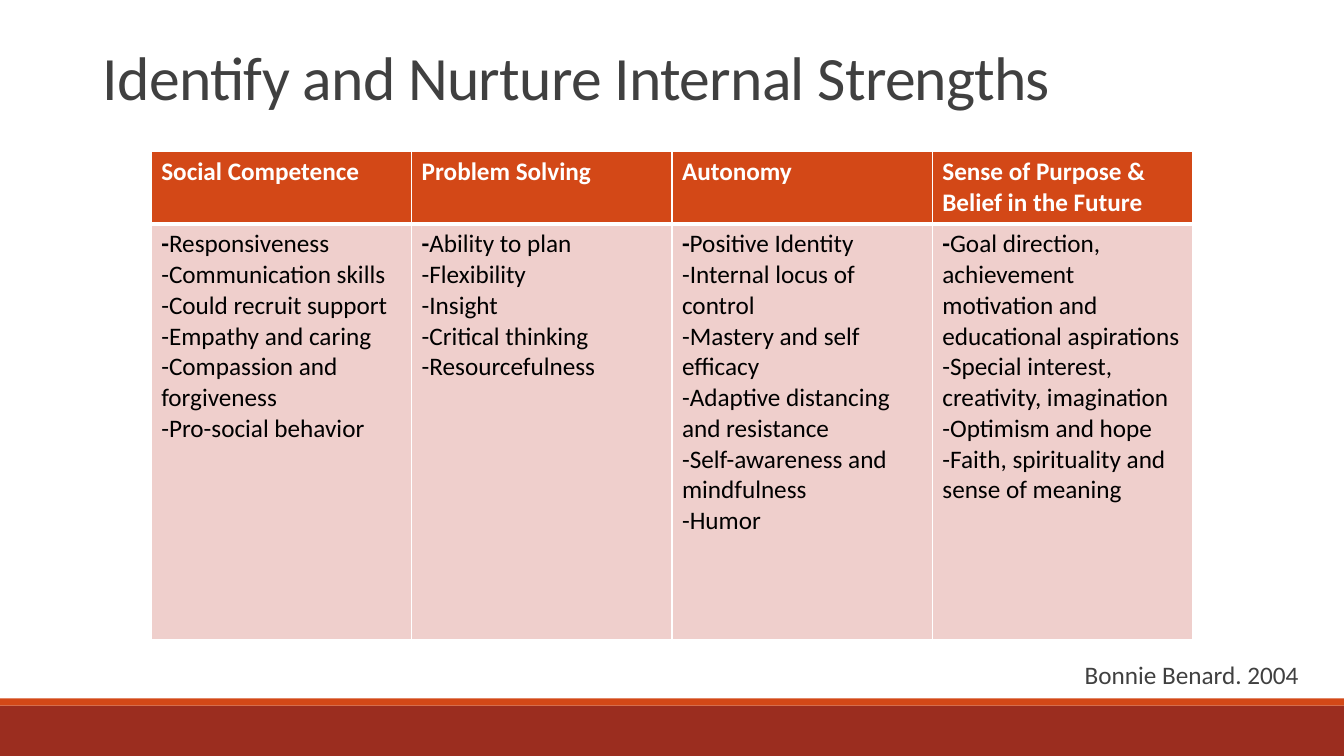
from dataclasses import dataclass

from lxml import etree
from pptx import Presentation
from pptx.dml.color import RGBColor
from pptx.enum.shapes import MSO_SHAPE
from pptx.enum.text import MSO_ANCHOR, MSO_AUTO_SIZE, PP_ALIGN
from pptx.oxml.ns import qn
from pptx.util import Inches, Pt

RECT = MSO_SHAPE.RECTANGLE
BOTTOM = MSO_ANCHOR.BOTTOM
LEFT = PP_ALIGN.LEFT
NO_FIT, GROW = MSO_AUTO_SIZE.NONE, MSO_AUTO_SIZE.SHAPE_TO_FIT_TEXT

ORANGE = RGBColor(0xD3, 0x48, 0x17)
BRICK = RGBColor(0x9B, 0x2D, 0x1F)
PINK = RGBColor(0xEF, 0xCF, 0xCC)
GREY = RGBColor(0x40, 0x40, 0x40)
WHITE = RGBColor(0xFF, 0xFF, 0xFF)
BLACK = RGBColor(0, 0, 0)

TITLE_FONT = {"name": "Calibri", "size": Pt(44), "bold": False}
TEXT_FONT = {"name": "Calibri", "size": Pt(18), "bold": False}
BOLD_FONT = TEXT_FONT | {"bold": True}


@dataclass(frozen=True)
class Bar:
    top: float
    height: float
    color: RGBColor


@dataclass(frozen=True)
class Strength:
    heading: str
    traits: tuple[str, ...]


BARS = (Bar(7, 0.5, BRICK), Bar(6.93, 0.07, ORANGE))
STRENGTHS = (
    Strength("Social Competence", (
        "Responsiveness", "Communication skills", "Could recruit support",
        "Empathy and caring", "Compassion and forgiveness",
        "Pro-social behavior")),
    Strength("Problem Solving", (
        "Ability to plan", "Flexibility", "Insight", "Critical thinking",
        "Resourcefulness")),
    Strength("Autonomy", (
        "Positive Identity", "Internal locus of control",
        "Mastery and self efficacy", "Adaptive distancing and resistance",
        "Self-awareness and mindfulness", "Humor")),
    Strength("Sense of Purpose & Belief in the Future", (
        "Goal direction, achievement motivation and educational aspirations",
        "Special interest, creativity, imagination", "Optimism and hope",
        "Faith, spirituality and sense of meaning")),
)


def add_run(p, text: str, font: dict, color: RGBColor):
    r = p.add_run()
    r.text = text
    for name, value in font.items():
        setattr(r.font, name, value)
    r.font.color.rgb = color
    return r


def add_bar(slide, bar: Bar, width: int) -> None:
    sp = slide.shapes.add_shape(RECT, 0, Inches(bar.top), width,
                                Inches(bar.height))
    sp.shadow.inherit = False
    sp.fill.solid()
    sp.fill.fore_color.rgb = bar.color
    sp.line.fill.background()


def add_title(slide, text: str) -> None:
    sp = slide.shapes.title
    sp.left, sp.top = Inches(0.92), Inches(-0.42)
    sp.width, sp.height = Inches(10.08), Inches(1.59)
    tf = sp.text_frame
    tf.word_wrap = True
    tf.auto_size = NO_FIT
    tf.vertical_anchor = BOTTOM
    p = tf.paragraphs[0]
    p.alignment = LEFT
    p.line_spacing = 0.85
    r = add_run(p, text, TITLE_FONT, GREY)
    r.font._element.set("spc", "-50")


def format_cell(cell, fill: RGBColor, borders: dict[str, int]) -> None:
    """Set the cell's fill and its white borders, with widths in points."""
    tc_pr = cell._tc.get_or_add_tcPr()
    for side, width in borders.items():
        ln = etree.SubElement(tc_pr, qn(f"a:ln{side}"), w=str(Pt(width)))
        solid = etree.SubElement(ln, qn("a:solidFill"))
        etree.SubElement(solid, qn("a:srgbClr"), val=str(WHITE))
    cell.fill.solid()
    cell.fill.fore_color.rgb = fill
    cell.margin_left = cell.margin_right = Inches(0.1)
    cell.margin_top = cell.margin_bottom = Inches(0.05)


def add_strengths_table(slide, strengths: tuple[Strength, ...]) -> None:
    table = slide.shapes.add_table(
        2, len(strengths), Inches(1.5), Inches(1.5),
        Inches(10.33), Inches(4.85)).table
    table.rows[0].height, table.rows[1].height = Inches(0.72), Inches(4.13)
    for col, strength in enumerate(strengths):
        head, body = table.cell(0, col), table.cell(1, col)
        format_cell(head, ORANGE, {"L": 1, "R": 1, "T": 1, "B": 3})
        format_cell(body, PINK, {"L": 1, "R": 1, "T": 3, "B": 1})
        add_run(head.text_frame.paragraphs[0], strength.heading,
                BOLD_FONT, WHITE)
        tf = body.text_frame
        for i, trait in enumerate(strength.traits):
            if i == 0:
                p = tf.paragraphs[0]
                add_run(p, "-", BOLD_FONT, BLACK)
                add_run(p, trait, TEXT_FONT, BLACK)
            else:
                add_run(tf.add_paragraph(), f"-{trait}", TEXT_FONT, BLACK)


def add_source(slide, text: str) -> None:
    sp = slide.shapes.add_textbox(Inches(10.66), Inches(6.49),
                                  Inches(2.35), Inches(0.4))
    tf = sp.text_frame
    tf.word_wrap = False
    tf.auto_size = GROW
    add_run(tf.paragraphs[0], text, TEXT_FONT, GREY)


def main() -> None:
    prs = Presentation()
    prs.slide_width, prs.slide_height = Inches(13.33), Inches(7.5)
    title_only = prs.slide_layouts[5]
    slide = prs.slides.add_slide(title_only)
    for bar in BARS:
        add_bar(slide, bar, prs.slide_width)
    add_title(slide, "Identify and Nurture Internal Strengths")
    add_strengths_table(slide, STRENGTHS)
    add_source(slide, "Bonnie Benard. 2004")
    prs.save("out.pptx")


if __name__ == "__main__":
    main()
